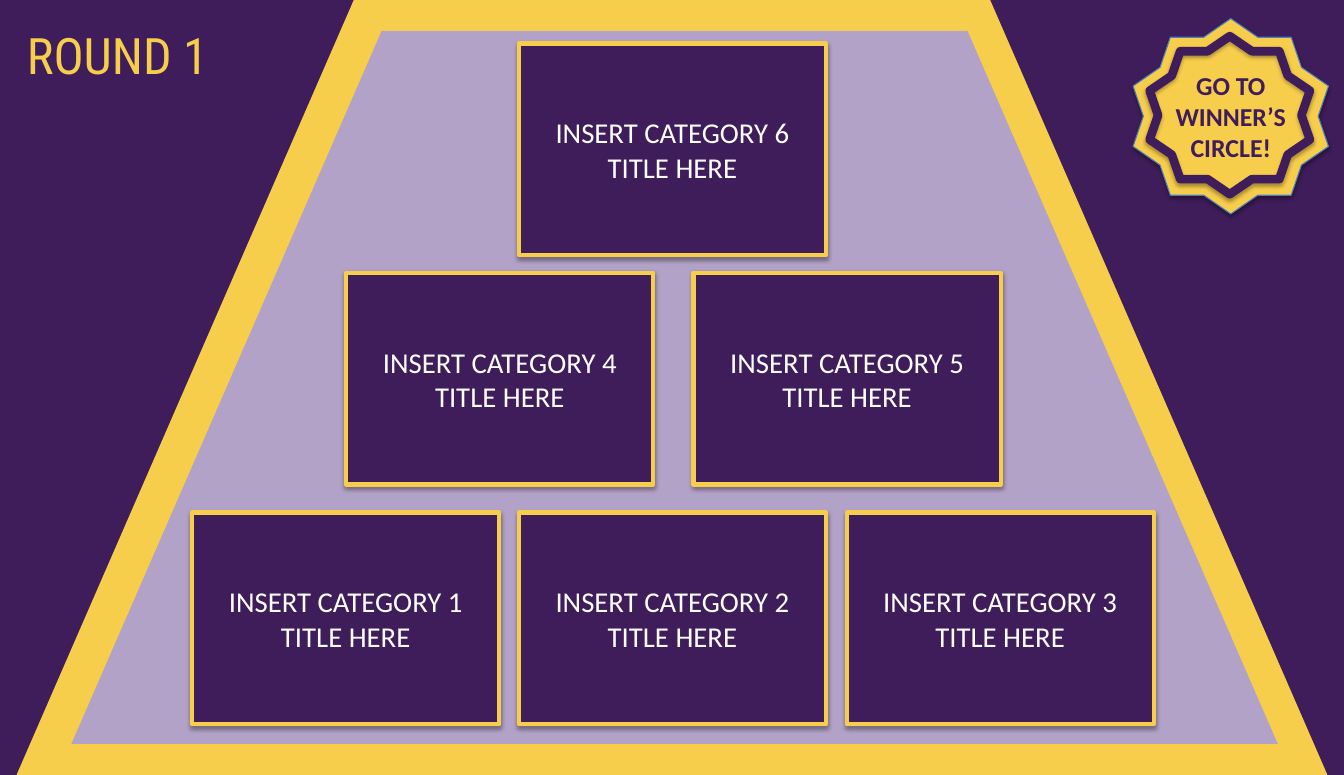
from lxml.etree import SubElement
from pptx import Presentation
from pptx.dml.color import RGBColor
from pptx.enum.shapes import MSO_SHAPE
from pptx.enum.text import MSO_ANCHOR, MSO_AUTO_SIZE, PP_ALIGN
from pptx.oxml.ns import qn
from pptx.util import Inches, Pt

COLORS = {"purple": "3F1D5A", "gold": "F7CE4C", "lilac": "B3A2C7",
          "blue": "4B7EBC", "white": "FFFFFF"}
COLORS = {name: RGBColor.from_string(value) for name, value in COLORS.items()}

deck = Presentation()
deck.slide_width, deck.slide_height = Inches(13), Inches(7.5)
page = deck.slides.add_slide(deck.slide_layouts[5])
page.background.fill.solid()
page.background.fill.fore_color.rgb = COLORS["purple"]


def add_figure(preset, place, fill=None, line=None, width=0, shadow=True):
    figure = page.shapes.add_shape(preset, *map(Inches, place))
    if fill:
        figure.fill.solid()
        figure.fill.fore_color.rgb = COLORS[fill]
    else:
        figure.fill.background()
    if line:
        figure.line.color.rgb = COLORS[line]
        figure.line.width = Pt(width)
    else:
        figure.line.fill.background()
    figure.shadow.inherit = False
    if shadow:
        effects = figure._element.spPr.find(qn("a:effectLst"))
        outer = SubElement(effects, qn("a:outerShdw"), blurRad=str(Pt(3.1)),
                           dist=str(Pt(1.8)), dir="5400000", rotWithShape="0")
        black = SubElement(outer, qn("a:srgbClr"), val="000000")
        SubElement(black, qn("a:alpha"), val="35000")
    return figure


def write(box, lines, color, align, frame_format, font_format):
    frame = box.text_frame
    for name, value in frame_format.items():
        setattr(frame, name, value)
    frame.text = "\n".join(lines)
    for para in frame.paragraphs:
        para.alignment = align
        for span in para.runs:
            span.font.color.rgb = COLORS[color]
            for name, value in font_format.items():
                setattr(span.font, name, value)


for place, fill in (((0.16, 0, 12.68, 7.5), "gold"),
                    ((0.69, 0.3, 11.67, 6.9), "lilac")):
    side = add_figure(MSO_SHAPE.TRAPEZOID, place, fill, shadow=False)
    side.adjustments[0] = 0.435

title = page.shapes.title
title.left, title.top = Inches(0.16), Inches(0.18)
title.width, title.height = Inches(2.57), Inches(0.69)
write(title, ["ROUND 1"], "gold", PP_ALIGN.LEFT,
      {"vertical_anchor": MSO_ANCHOR.TOP, "word_wrap": True,
       "auto_size": MSO_AUTO_SIZE.SHAPE_TO_FIT_TEXT},
      {"name": "Roboto Condensed", "size": Pt(35)})

centered = {"vertical_anchor": MSO_ANCHOR.MIDDLE, "word_wrap": True}
pyramid_rows = [(4.96, [1.86, 5.02, 8.19]), (2.64, [3.35, 6.71]), (0.42, [5.02])]
number = 0
for top, lefts in pyramid_rows:
    for left in lefts:
        number += 1
        card = add_figure(MSO_SHAPE.RECTANGLE, (left, top, 2.97, 2.05), "purple", "gold", 3)
        write(card, [f"INSERT CATEGORY {number} TITLE HERE"], "white",
              PP_ALIGN.CENTER, centered, {"name": "Calibri", "size": Pt(20)})

badge = add_figure(MSO_SHAPE.STAR_10_POINT, (10.96, 0.18, 1.89, 1.89), "gold", "blue", 0.75)
write(badge, ["GO TO", "WINNER’S CIRCLE!"], "purple", PP_ALIGN.CENTER, centered,
      {"name": "Calibri", "size": Pt(18), "bold": True})
add_figure(MSO_SHAPE.STAR_10_POINT, (11.12, 0.35, 1.55, 1.53), line="purple", width=6)

deck.save("out.pptx")
